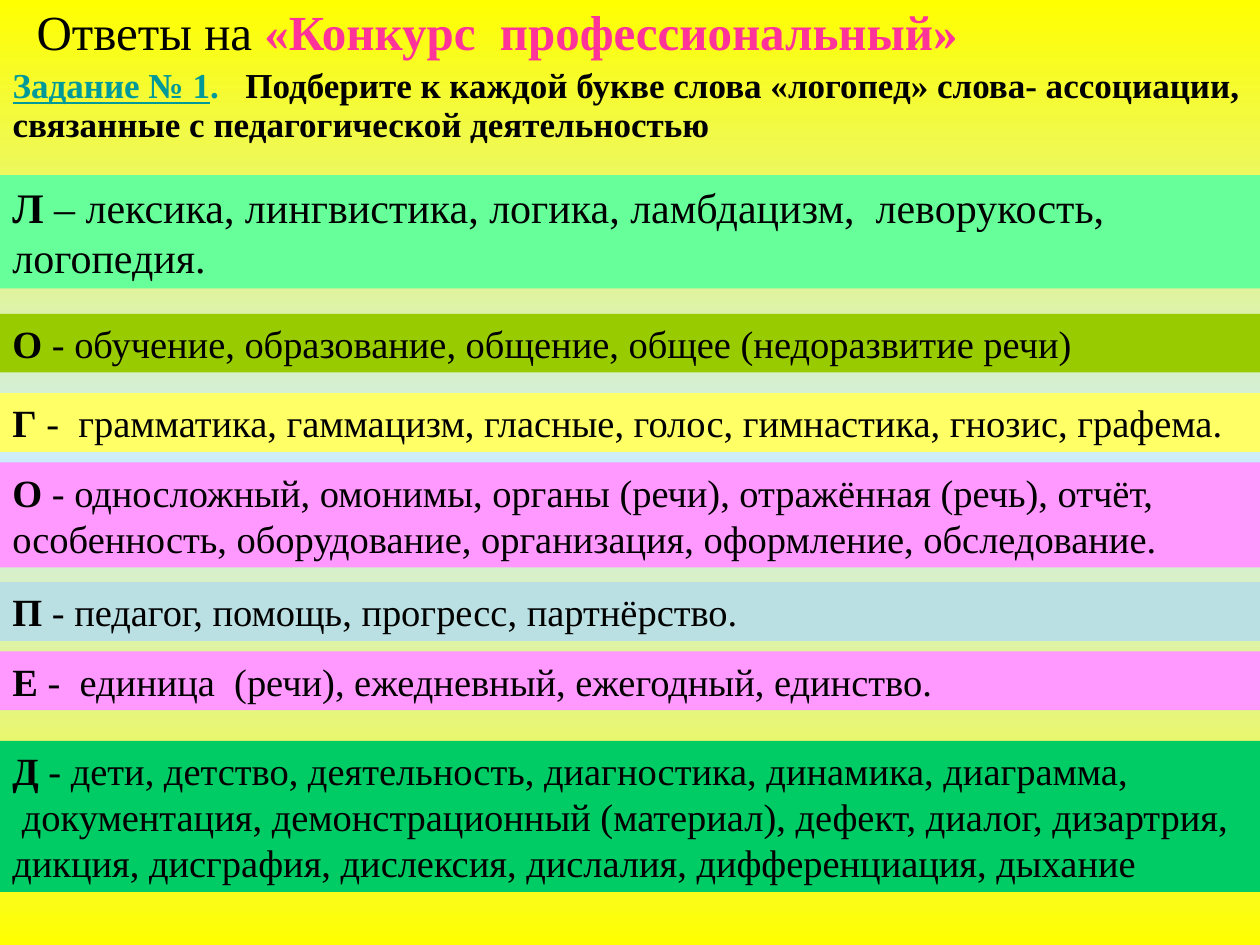
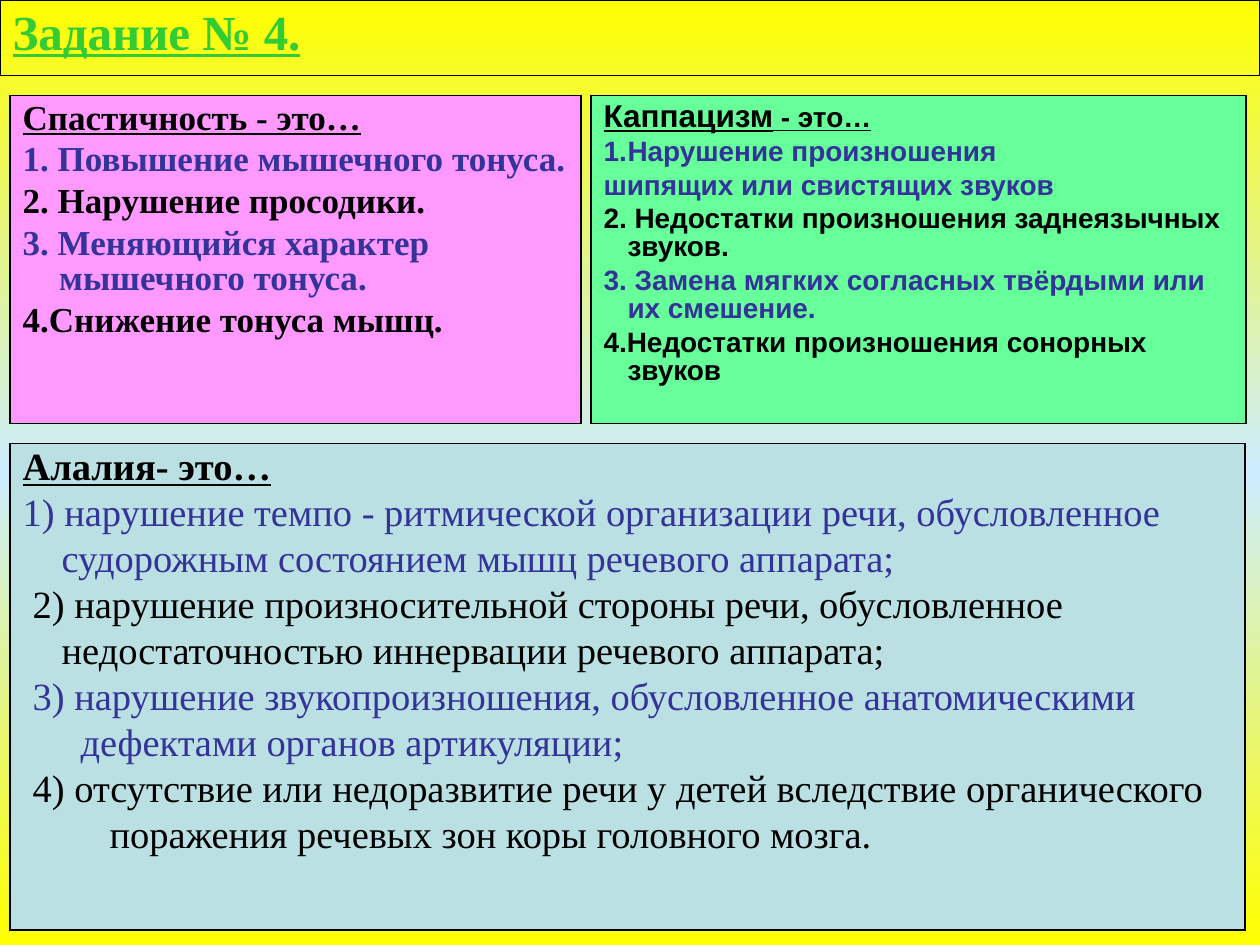
"""Builds two answer slides of a speech therapists' contest."""
import copy

import pptx
import pptx.dml.color
import pptx.enum.text
import pptx.oxml
import pptx.oxml.ns
import pptx.util

Inches, Pt = pptx.util.Inches, pptx.util.Pt
RGB = pptx.dml.color.RGBColor

YELLOW, SKY = RGB(0xFF, 0xFF, 0x00), RGB(0xCC, 0xEC, 0xFF)
MINT, OLIVE, LEMON = RGB(0x66, 0xFF, 0x99), RGB(0x99, 0xCC, 0x00), RGB(0xFF, 0xFF, 0x66)
PINK, PALE_BLUE, GREEN = RGB(0xFF, 0x99, 0xFF), RGB(0xBB, 0xE0, 0xE3), RGB(0x00, 0xCC, 0x66)
BLACK, INDIGO = RGB(0x00, 0x00, 0x00), RGB(0x33, 0x33, 0x99)
MAGENTA, TEAL, LEAF = RGB(0xFF, 0x33, 0x99), RGB(0x00, 0x99, 0x99), RGB(0x33, 0xCC, 0x33)
SERIF, SANS = "Times New Roman", "Arial"

BOLD = {"bold": True}
HEADING = {"bold": True, "underline": True}

CONTEST = [
    {"size": 28, "left": 0.19, "runs": [
        ("Ответы на ", {}),
        ("«Конкурс  профессиональный»", {"bold": True, "color": MAGENTA})]},
    {"size": 20, "runs": [
        ("Задание № 1", {"color": TEAL, **HEADING}),
        (".   ", {"color": TEAL, "bold": True}),
        ("Подберите к каждой букве слова «логопед» слова- ассоциации, "
         "связанные с педагогической деятельностью", BOLD)]},
]

# top, fill, size, rows shown, letter, lines
ASSOCIATIONS = [
    (1.39, MINT, 24, 2, "Л", [" – лексика, лингвистика, логика, ламбдацизм,  леворукость, логопедия."]),
    (2.49, OLIVE, 22, 1, "О", [" - обучение, образование, общение, общее (недоразвитие речи)"]),
    (3.12, LEMON, 22, 1, "Г", [" -  грамматика, гаммацизм, гласные, голос, гимнастика, гнозис, графема."]),
    (3.67, PINK, 22, 2, "О", [" - односложный, омонимы, органы (речи), отражённая (речь), отчёт, "
                              "особенность, оборудование, организация, оформление, обследование."]),
    (4.62, PALE_BLUE, 22, 1, "П", [" - педагог, помощь, прогресс, партнёрство."]),
    (5.17, PINK, 22, 1, "Е", [" -  единица  (речи), ежедневный, ежегодный, единство."]),
    (5.88, GREEN, 22, 3, "Д", [
        " - дети, детство, деятельность, диагностика, динамика, диаграмма,",
        " документация, демонстрационный (материал), дефект, диалог, дизартрия,",
        "дикция, дисграфия, дислексия, дислалия, дифференциация, дыхание"]),
]

TASK = [{"size": 28, "runs": [("Задание № 4.", {"color": LEAF, **HEADING})]}]

SPASTICITY = [("Спастичность - это…", HEADING)] + [
    (text, {"bold": True, "color": color}) for text, color in [
        ("1. Повышение мышечного тонуса.", INDIGO),
        ("2. Нарушение просодики.", BLACK),
        ("3. Меняющийся характер мышечного тонуса.", INDIGO),
        ("4.Снижение тонуса мышц.", BLACK)]]

KAPPACISM = [
    ("Нарушение произношения", INDIGO, True),
    ("шипящих или свистящих звуков", INDIGO, False),
    ("2. Недостатки произношения заднеязычных звуков.", BLACK, False),
    ("3. Замена мягких согласных твёрдыми или их смешение.", INDIGO, False),
    ("4.Недостатки произношения сонорных звуков", BLACK, False),
]

ALALIA = [
    (0, INDIGO, "1) нарушение темпо - ритмической организации речи, обусловленное"),
    (0.31, INDIGO, "судорожным состоянием мышц речевого аппарата;"),
    (0.08, BLACK, "2) нарушение произносительной стороны речи, обусловленное"),
    (0.31, BLACK, "недостаточностью иннервации речевого аппарата;"),
    (0.08, INDIGO, "3) нарушение звукопроизношения, обусловленное анатомическими"),
    (0.46, INDIGO, "дефектами органов артикуляции;"),
    (0.08, BLACK, "4) отсутствие или недоразвитие речи у детей вследствие органического"),
    (0.69, BLACK, "поражения речевых зон коры головного мозга."),
]


def style(font, name, size, color=BLACK, bold=False, underline=False):
    font.name, font.size = name, Pt(size)
    font.bold, font.underline = bold, underline
    font.color.rgb = color


def write(frame, paragraphs, name=SERIF, spacing=None, gap=0.2):
    for index, content in enumerate(paragraphs):
        paragraph = frame.paragraphs[0] if index == 0 else frame.add_paragraph()
        size = content["size"]
        properties = paragraph._p.get_or_add_pPr()
        properties.set("marL", str(Inches(content.get("left", 0))))
        properties.set("indent", str(Inches(content.get("first", 0))))
        if content.get("numbered"):
            number = pptx.oxml.parse_xml(
                f'<a:buAutoNum {pptx.oxml.ns.nsdecls("a")} type="arabicPeriod"/>')
            properties.append(number)
        if spacing:
            paragraph.line_spacing = spacing
        if index:
            paragraph.space_before = Pt(size * gap)
        runs = content["runs"]
        if len(runs) == 1:
            style(paragraph.font, name, size, **runs[0][1])
        for text, look in runs:
            run = paragraph.add_run()
            run.text = text
            style(run.font, name, **{"size": size, **look})


def add_panel(slide, place, paragraphs, fill=None, border=True, **layout):
    table = slide.shapes.add_table(1, 1, *map(Inches, place)).table
    table.first_row = table.horz_banding = False
    cell = table.cell(0, 0)
    paint = '<a:solidFill><a:srgbClr val="000000"/></a:solidFill>' if border else "<a:noFill/>"
    for side in "LRTB":
        cell._tc.get_or_add_tcPr().append(pptx.oxml.parse_xml(
            f'<a:ln{side} {pptx.oxml.ns.nsdecls("a")} w="{Pt(1)}">{paint}</a:ln{side}>'))
    if fill is None:
        cell.fill.background()
    else:
        cell.fill.solid()
        cell.fill.fore_color.rgb = fill
    write(cell.text_frame, paragraphs, **layout)


def add_band(slide, top, fill, size, rows, letter, lines):
    height = rows * size / 60 + 0.1
    band = slide.shapes.add_textbox(0, Inches(top), Inches(10), Inches(height))
    band.fill.solid()
    band.fill.fore_color.rgb = fill
    band.text_frame.word_wrap = True
    band.text_frame.auto_size = pptx.enum.text.MSO_AUTO_SIZE.SHAPE_TO_FIT_TEXT
    paragraphs = [{"size": size, "runs": [(line, {})]} for line in lines]
    paragraphs[0]["runs"].insert(0, (letter, BOLD))
    write(band.text_frame, paragraphs, gap=0)


def add_slide(deck):
    slide = deck.slides.add_slide(deck.slide_layouts[6])
    fill = slide.background.fill
    fill.gradient()
    fill.gradient_angle = 270
    first = slide.element.find(".//" + pptx.oxml.ns.qn("a:gs"))
    middle = copy.deepcopy(first)
    middle.set("pos", "50000")
    first.addnext(middle)
    for stop, color in zip(fill.gradient_stops, (YELLOW, SKY, YELLOW)):
        stop.color.rgb = color
    return slide


def hanging(size, indent, runs, numbered=False):
    return {"size": size, "left": indent, "first": -indent, "runs": runs, "numbered": numbered}


def main():
    deck = pptx.Presentation()
    deck.slide_width, deck.slide_height = Inches(10), Inches(7.5)

    answers = add_slide(deck)
    add_panel(answers, (0, 0, 10, 1.31), CONTEST, border=False)
    for association in ASSOCIATIONS:
        add_band(answers, *association)

    terms = add_slide(deck)
    add_panel(terms, (0, 0, 10, 0.6), TASK)
    spasticity = [hanging(20, 0.29, [run]) for run in SPASTICITY]
    add_panel(terms, (0.08, 0.76, 4.53, 2.6), spasticity, PINK, spacing=0.9)
    kappacism = [hanging(16, 0.19, [("Каппацизм", {"size": 18, **HEADING}), (" - это…", HEADING)])]
    kappacism += [hanging(16, 0.19, [(text, {"bold": True, "color": color})], numbered)
                  for text, color, numbered in KAPPACISM]
    add_panel(terms, (4.69, 0.76, 5.2, 2.6), kappacism, MINT, name=SANS, spacing=0.9)
    alalia = [{"size": 22, "runs": [("Алалия- это…", HEADING)]}]
    alalia += [{"size": 22, "left": left, "runs": [(text, {"color": color})]}
               for left, color, text in ALALIA]
    add_panel(terms, (0.08, 3.52, 9.8, 3.86), alalia, PALE_BLUE, spacing=0.9)

    deck.save("out.pptx")


if __name__ == "__main__":
    main()
